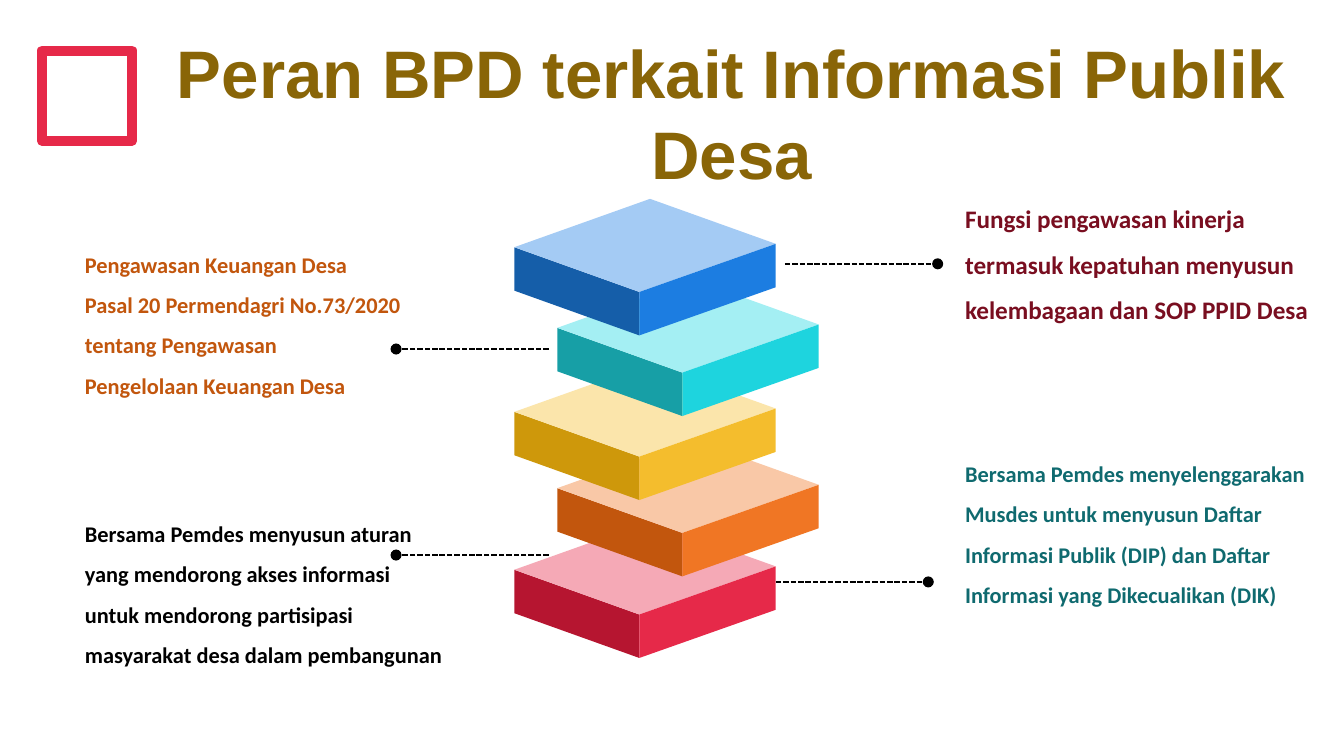
from lxml.etree import SubElement
from pptx import Presentation
from pptx.dml.color import RGBColor as RGB
from pptx.enum.dml import MSO_LINE
from pptx.enum.shapes import MSO_CONNECTOR, MSO_SHAPE
from pptx.enum.text import MSO_ANCHOR, MSO_AUTO_SIZE, PP_ALIGN
from pptx.oxml.ns import qn
from pptx.util import Inches, Pt

CRIMSON = RGB(0xE6, 0x29, 0x49)
CRIMSON_DARK = RGB(0xB6, 0x15, 0x30)
CRIMSON_LIGHT = RGB(0xF5, 0xA9, 0xB6)
ORANGE = RGB(0xF0, 0x76, 0x24)
ORANGE_DARK = RGB(0xC2, 0x56, 0x0D)
ORANGE_LIGHT = RGB(0xF9, 0xC8, 0xA7)
GOLD = RGB(0xF4, 0xBD, 0x2D)
GOLD_DARK = RGB(0xCE, 0x98, 0x0B)
GOLD_LIGHT = RGB(0xFB, 0xE5, 0xAB)
TEAL = RGB(0x1E, 0xD4, 0xDE)
TEAL_DARK = RGB(0x17, 0x9F, 0xA6)
TEAL_LIGHT = RGB(0xA4, 0xEF, 0xF3)
BLUE = RGB(0x1C, 0x7D, 0xE1)
BLUE_DARK = RGB(0x15, 0x5E, 0xA9)
BLUE_LIGHT = RGB(0xA4, 0xCB, 0xF4)
BROWN = RGB(0x89, 0x65, 0x07)
MAROON = RGB(0x79, 0x0E, 0x20)
DEEP_TEAL = RGB(0x0F, 0x6A, 0x6F)
BLACK = RGB(0, 0, 0)

COLUMNS = 100
LEFT_X, RIGHT_X = 38.27, 41.47
SIDE = 3.23
CORNERS = {
    "left": (0, 3.6), "back": (10.1, 0), "right": (19.45, 3.35), "front": (9.3, 6.93),
}


class StackSlide:
    heading_font, body_font = "Arial", "Calibri"

    def __init__(self, deck):
        self.cell = deck.slide_width / COLUMNS
        self.slide = deck.slides.add_slide(deck.slide_layouts[5])
        self.shapes = self.slide.shapes

    def lengths(self, *cells):
        return [round(cell * self.cell) for cell in cells]

    def style(self, paragraph, font_name, size, color):
        font = paragraph.font
        font.name, font.size, font.bold = font_name, Pt(size), True
        font.color.rgb = color

    def title(self, text, *box):
        heading = self.shapes.title
        heading.left, heading.top, heading.width, heading.height = self.lengths(*box)
        frame = heading.text_frame
        frame.text = text
        frame.auto_size = MSO_AUTO_SIZE.NONE
        frame.vertical_anchor = MSO_ANCHOR.MIDDLE
        frame.margin_left, frame.margin_right = self.lengths(0.7, 0.7)
        frame.margin_top, frame.margin_bottom = self.lengths(0.4, 0.4)
        frame.paragraphs[0].alignment = PP_ALIGN.CENTER
        self.style(frame.paragraphs[0], self.heading_font, 36, BROWN)

    def frame_square(self, x, y, side):
        square = self.shapes.add_shape(MSO_SHAPE.RECTANGLE, *self.lengths(x, y, side, side))
        square.fill.background()
        square.line.color.rgb, square.line.width = CRIMSON, Pt(5.5)
        square.shadow.inherit = False

    def block(self, x, y, dark, light, bright):
        group = self.shapes.add_group_shape()
        left, back, right, front = [(x + dx, y + dy) for dx, dy in CORNERS.values()]
        low_left, low_right, low_front = [(px, py + SIDE) for px, py in (left, right, front)]
        for corners, color in (
            ((low_front, low_left, left, front), dark),
            ((front, left, back, right), light),
            ((right, low_right, low_front, front), bright),
        ):
            self.face(group, corners, color)

    def face(self, group, corners, color):
        start, *others = [self.lengths(*corner) for corner in corners]
        builder = group.shapes.build_freeform(*start)
        builder.add_line_segments(others, close=True)
        face = builder.convert_to_shape()
        face.fill.solid()
        face.fill.fore_color.rgb = color
        face.line.fill.background()
        face.shadow.inherit = False

    def pointer(self, start_x, end_x, y):
        pointer = self.shapes.add_connector(
            MSO_CONNECTOR.STRAIGHT, *self.lengths(start_x, y, end_x, y))
        pointer.line.color.rgb, pointer.line.width = BLACK, Pt(1)
        pointer.line.dash_style = MSO_LINE.SQUARE_DOT
        SubElement(pointer.line._get_or_add_ln(), qn("a:tailEnd"), type="oval")
        SubElement(pointer._element.spPr, qn("a:effectLst"))

    def note(self, box, lines, color, size=12):
        frame = self.shapes.add_textbox(*self.lengths(*box)).text_frame
        frame.word_wrap = True
        frame.auto_size = MSO_AUTO_SIZE.SHAPE_TO_FIT_TEXT
        frame.text = "\n".join(lines)
        for paragraph in frame.paragraphs:
            paragraph.line_spacing = 1.5
            self.style(paragraph, self.body_font, size, color)


def main():
    deck = Presentation()
    deck.slide_width = Inches(10)
    deck.slide_height = deck.slide_width * 9 // 16
    page = StackSlide(deck)
    page.frame_square(3.13, 3.77, 6.7)
    page.title("Peran BPD terkait Informasi Publik Desa", 11.33, 4.93, 86.2, 6.8)

    for block in (
        (LEFT_X, 38.8, CRIMSON_DARK, CRIMSON_LIGHT, CRIMSON),
        (RIGHT_X, 32.73, ORANGE_DARK, ORANGE_LIGHT, ORANGE),
        (LEFT_X, 27.05, GOLD_DARK, GOLD_LIGHT, GOLD),
        (RIGHT_X, 20.8, TEAL_DARK, TEAL_LIGHT, TEAL),
        (LEFT_X, 14.8, BLUE_DARK, BLUE_LIGHT, BLUE),
    ):
        page.block(*block)

    for pointer in (
        (40.83, 29.47, 25.97), (57.73, 69.07, 43.3),
        (40.83, 29.47, 41.3), (58.4, 69.77, 19.63),
    ):
        page.pointer(*pointer)

    page.note((70.83, 13.53, 28, 10.9), (
        "Fungsi pengawasan kinerja",
        "termasuk kepatuhan menyusun",
        "kelembagaan dan SOP PPID Desa",
    ), MAROON, size=13.5)
    page.note((5.33, 17.18, 26.2, 12.8), (
        "Pengawasan Keuangan Desa",
        "Pasal 20 Permendagri No.73/2020 tentang Pengawasan",
        "Pengelolaan Keuangan Desa",
    ), ORANGE_DARK)
    page.note((5.33, 37.22, 29.1, 12.8), (
        "Bersama Pemdes menyusun aturan",
        "yang mendorong akses informasi",
        "untuk mendorong partisipasi",
        "masyarakat desa dalam pembangunan",
    ), BLACK)
    page.note((70.83, 32.74, 27.3, 12.8), (
        "Bersama Pemdes menyelenggarakan Musdes untuk menyusun Daftar",
        "Informasi Publik (DIP) dan Daftar",
        "Informasi yang Dikecualikan (DIK)",
    ), DEEP_TEAL)
    deck.save("out.pptx")


if __name__ == "__main__":
    main()
